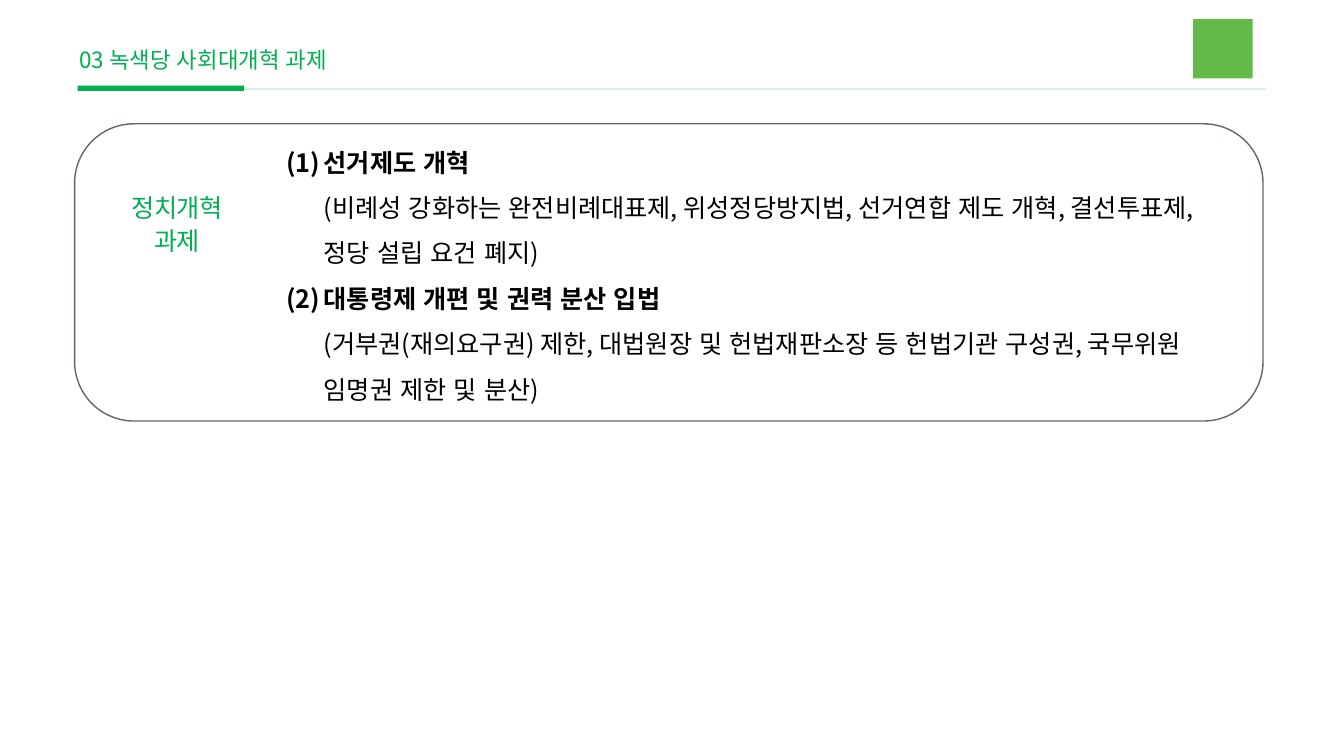
from dataclasses import dataclass

import lxml.etree
import pptx
import pptx.dml.color
import pptx.enum.dml
import pptx.enum.lang
import pptx.enum.shapes
import pptx.enum.text
import pptx.oxml.ns
import pptx.util

Cm = pptx.util.Cm
Pt = pptx.util.Pt
Shape = pptx.enum.shapes.MSO_SHAPE
Align = pptx.enum.text.PP_ALIGN


@dataclass(frozen=True)
class Theme:
    font: str = "Noto Sans CJK KR"
    green: str = "00B050"
    emblem: str = "62BB46"
    outline: str = "6B645C"
    ink: str = "000000"
    title_size: int = 16
    body_size: int = 18


@dataclass(frozen=True)
class Box:
    left: float
    top: float
    width: float
    height: float

    def inner(self, left, top, width, height):
        return Box(self.left + left, self.top + top, width, height)

    def lengths(self):
        return Cm(self.left), Cm(self.top), Cm(self.width), Cm(self.height)


THEME = Theme()
REFORMS = [
    ("선거제도 개혁",
     "(비례성 강화하는 완전비례대표제, 위성정당방지법, 선거연합 제도 개혁, "
     "결선투표제, 정당 설립 요건 폐지)"),
    ("대통령제 개편 및 권력 분산 입법",
     "(거부권(재의요구권) 제한, 대법원장 및 헌법재판소장 등 헌법기관 구성권, "
     "국무위원 임명권 제한 및 분산)"),
]


def color(value):
    return pptx.dml.color.RGBColor.from_string(value)


def add_xml(parent, tag, **attributes):
    return lxml.etree.SubElement(parent, pptx.oxml.ns.qn(tag), **attributes)


def add_block(slide, box, fill):
    block = slide.shapes.add_shape(Shape.RECTANGLE, *box.lengths())
    block.shadow.inherit = False
    block.fill.solid()
    block.fill.fore_color.rgb = color(fill)
    block.line.fill.background()


def add_text_frame(slide, box):
    frame = slide.shapes.add_textbox(*box.lengths()).text_frame
    frame.word_wrap = True
    return frame


def add_para(frame, first, line_spacing=None, align=Align.LEFT):
    para = frame.paragraphs[0] if first else frame.add_paragraph()
    para.alignment = align
    if line_spacing:
        para.line_spacing = line_spacing
    return para


def add_span(para, text, size, ink, bold=False):
    span = para.add_run()
    span.text = text
    span.font.size = Pt(size)
    span.font.bold = bold
    span.font.color.rgb = color(ink)
    span.font.name = THEME.font
    span.font.language_id = pptx.enum.lang.MSO_LANGUAGE_ID.KOREAN
    properties = span.font._element
    add_xml(properties, "a:ea", typeface=THEME.font)
    return properties


def add_rule(slide, left, top, width):
    rule = slide.shapes.add_connector(
        pptx.enum.shapes.MSO_CONNECTOR.STRAIGHT,
        Cm(left), Cm(top), Cm(left + width), Cm(top))
    rule.line.width = Pt(0.5)
    rule.line.color.rgb = color(THEME.green)
    properties = rule._element.spPr
    tint = properties.find(".//" + pptx.oxml.ns.qn("a:srgbClr"))
    add_xml(tint, "a:alpha", val="50000")
    add_xml(properties, "a:effectLst")


def add_header(slide, box, title):
    add_rule(slide, box.left, box.top + 1.76, box.width)
    add_block(slide, box.inner(0, 1.68, 4.19, 0.13), THEME.green)
    add_block(slide, box.inner(28.11, 0, 1.5, 1.5), THEME.emblem)
    frame = add_text_frame(slide, box.inner(-0.21, 0.56, 14.63, 1.55))
    add_span(add_para(frame, True), title, THEME.title_size, THEME.green)


def add_label(slide, box, lines):
    frame = add_text_frame(slide, box)
    for index, line in enumerate(lines):
        para = add_para(frame, index == 0, 1.1, Align.CENTER)
        properties = add_span(para, line, THEME.body_size, THEME.green)
        properties.set("spc", "-50")


def add_reforms(slide, box, reforms):
    frame = add_text_frame(slide, box)
    for index, (heading, detail) in enumerate(reforms):
        para = add_para(frame, index == 0, 1.5)
        properties = para._p.get_or_add_pPr()
        properties.set("marL", str(Cm(0.95)))
        properties.set("indent", str(-Cm(0.95)))
        add_xml(properties, "a:buFont", typeface="+mj-lt")
        add_xml(properties, "a:buAutoNum", type="arabicParenBoth")
        add_span(para, heading, THEME.body_size, THEME.ink, bold=True)
        para.add_line_break()
        add_span(para, detail, THEME.body_size, THEME.ink)


def add_panel(slide, box):
    panel = slide.shapes.add_shape(Shape.ROUNDED_RECTANGLE, *box.lengths())
    panel.shadow.inherit = False
    panel.adjustments[0] = 0.2
    panel.fill.background()
    panel.line.color.rgb = color(THEME.outline)
    panel.line.width = Pt(1)
    add_label(slide, box.inner(0.53, 1.53, 4.11, 1.88), ["정치개혁", "과제"])
    add_reforms(slide, box.inner(5.08, 0.08, 24.1, 7.19), REFORMS)


def main():
    deck = pptx.Presentation()
    deck.slide_width, deck.slide_height = Cm(33.87), Cm(19.05)
    slide = deck.slides.add_slide(deck.slide_layouts[6])
    add_header(slide, Box(1.96, 0.48, 29.95, 1.8), "03 녹색당 사회대개혁 과제")
    add_panel(slide, Box(1.88, 3.12, 29.95, 7.49))
    deck.save("out.pptx")


if __name__ == "__main__":
    main()
